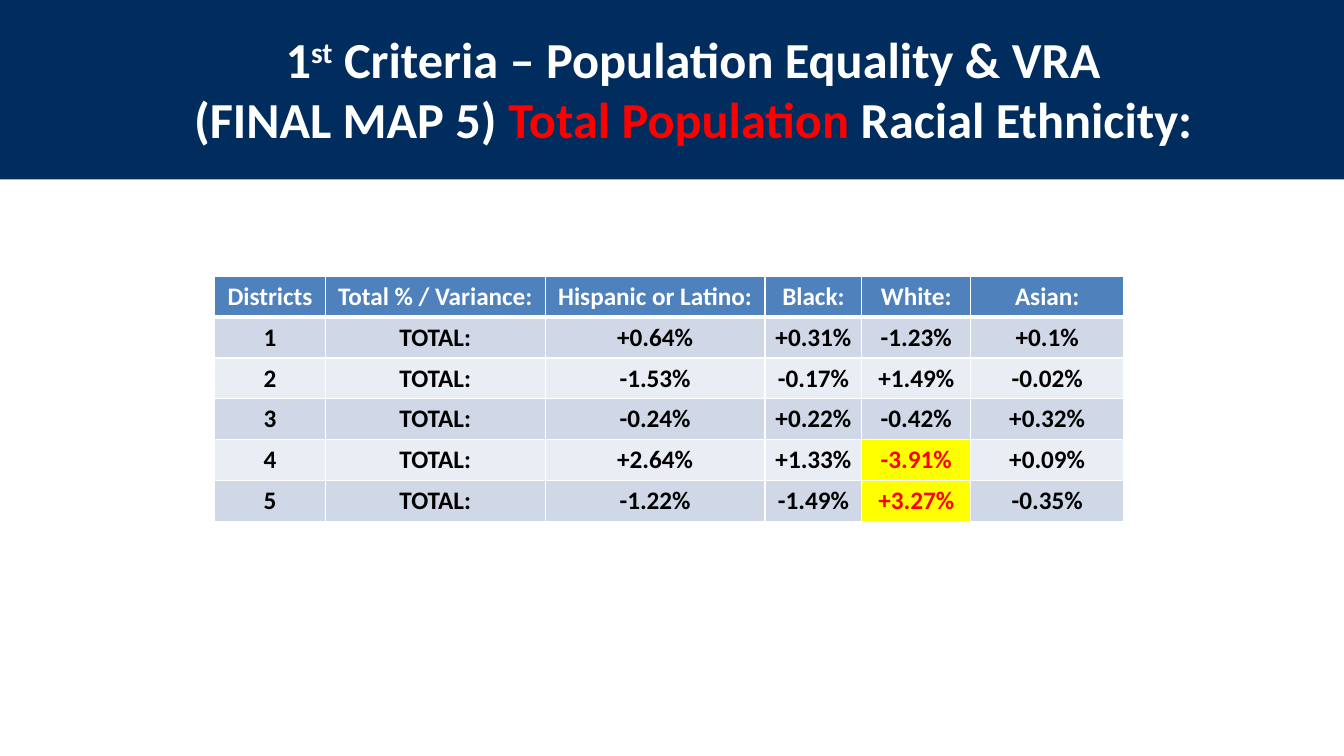
from dataclasses import dataclass

from lxml.etree import SubElement as Sub
from pptx import Presentation as Deck
from pptx.dml.color import RGBColor as Color
from pptx.enum.shapes import MSO_SHAPE as Shape
from pptx.enum.text import MSO_ANCHOR as Anchor, PP_ALIGN as Align
from pptx.oxml.ns import qn
from pptx.slide import Slide
from pptx.table import _Cell as Cell
from pptx.text.text import _Paragraph as Para
from pptx.util import Cm, Pt

WHITE = Color(0xFF, 0xFF, 0xFF)
BLACK = Color(0, 0, 0)
RED = Color(0xFF, 0, 0)
NAVY = Color(0, 0x2D, 0x5D)
BLUE = Color(0x4F, 0x81, 0xBD)
DARK = Color(0xD0, 0xD8, 0xE8)
LIGHT = Color(0xE9, 0xED, 0xF4)
YELLOW = Color(0xFF, 0xFF, 0)


@dataclass
class Piece:
    text: str
    color: Color = WHITE
    raised: bool = False


@dataclass
class Look:
    fill: Color
    ink: Color
    base: float = 1


TITLE = [
    [Piece("1"), Piece("st", raised=True),
     Piece(" Criteria – Population Equality & VRA")],
    [Piece("(FINAL MAP 5) "), Piece("Total Population ", RED),
     Piece("Racial Ethnicity:")],
]
HEADS = ["Districts", "Total % / Variance:", "Hispanic or Latino:",
         "Black:", "White:", "Asian:"]
SHARES = [
    ["+0.64%", "+0.31%", "-1.23%", "+0.1%"],
    ["-1.53%", "-0.17%", "+1.49%", "-0.02%"],
    ["-0.24%", "+0.22%", "-0.42%", "+0.32%"],
    ["+2.64%", "+1.33%", "-3.91%", "+0.09%"],
    ["-1.22%", "-1.49%", "+3.27%", "-0.35%"],
]
WIDTHS = [2.79, 5.54, 5.54, 2.44, 2.74, 3.86]
HEIGHT = 1.03
LIMIT = 3


def style(para: Para, size: int) -> None:
    para.alignment = Align.CENTER
    para.font.name = "Calibri"
    para.font.size = Pt(size)
    para.font.bold = True


def draw_band(slide: Slide, width: int) -> None:
    band = slide.shapes.add_shape(
        Shape.RECTANGLE, 0, Cm(-0.08), width, Cm(4.6))
    band.shadow.inherit = False
    band.fill.solid()
    band.fill.fore_color.rgb = NAVY
    band.line.fill.background()


def draw_title(slide: Slide) -> None:
    box = slide.shapes.add_textbox(Cm(0.18), Cm(0.58), Cm(33.32), Cm(5.21))
    frame = box.text_frame
    frame.word_wrap = True
    for row, line in enumerate(TITLE):
        para = frame.add_paragraph() if row else frame.paragraphs[0]
        para.level = 1
        props = para._p.get_or_add_pPr()
        props.set("marL", str(Cm(1.27)))
        props.set("indent", "0")
        style(para, 36)
        for piece in line:
            run = para.add_run()
            run.text = piece.text
            run.font.color.rgb = piece.color
            if piece.raised:
                run._r.get_or_add_rPr().set("baseline", "30000")


def edge(cell: Cell, base: float) -> None:
    props = cell._tc.get_or_add_tcPr()
    for side, size in zip("LRTB", (1, 1, 1, base)):
        line = Sub(props, qn(f"a:ln{side}"), w=str(Pt(size)))
        fill = Sub(line, qn("a:solidFill"))
        Sub(fill, qn("a:srgbClr"), val=str(WHITE))


def fill_cell(cell: Cell, text: str, look: Look) -> None:
    edge(cell, look.base)
    cell.fill.solid()
    cell.fill.fore_color.rgb = look.fill
    cell.vertical_anchor = Anchor.TOP
    cell.margin_left = cell.margin_right = Cm(0.2)
    para = cell.text_frame.paragraphs[0]
    para.text = text
    style(para, 18)
    para.font.color.rgb = look.ink


def pick_look(row: int, col: int, text: str) -> Look:
    if row == 0:
        return Look(BLUE, WHITE, 3)
    if col > 1 and abs(float(text.rstrip("%"))) > LIMIT:
        return Look(YELLOW, RED)
    return Look(DARK if row % 2 else LIGHT, BLACK)


def draw_table(slide: Slide) -> None:
    rows = [HEADS] + [[str(num), "TOTAL:", *shares]
                      for num, shares in enumerate(SHARES, 1)]
    table = slide.shapes.add_table(
        len(rows), len(HEADS), Cm(5.41), Cm(6.96),
        Cm(sum(WIDTHS)), Cm(HEIGHT * len(rows))).table
    for col, width in enumerate(WIDTHS):
        table.columns[col].width = Cm(width)
    for row, texts in enumerate(rows):
        table.rows[row].height = Cm(HEIGHT)
        for col, text in enumerate(texts):
            fill_cell(table.cell(row, col), text, pick_look(row, col, text))


def main() -> None:
    deck = Deck()
    deck.slide_width, deck.slide_height = Cm(33.87), Cm(19.05)
    slide = deck.slides.add_slide(deck.slide_layouts[6])
    draw_band(slide, deck.slide_width)
    draw_title(slide)
    draw_table(slide)
    deck.save("out.pptx")


if __name__ == "__main__":
    main()
